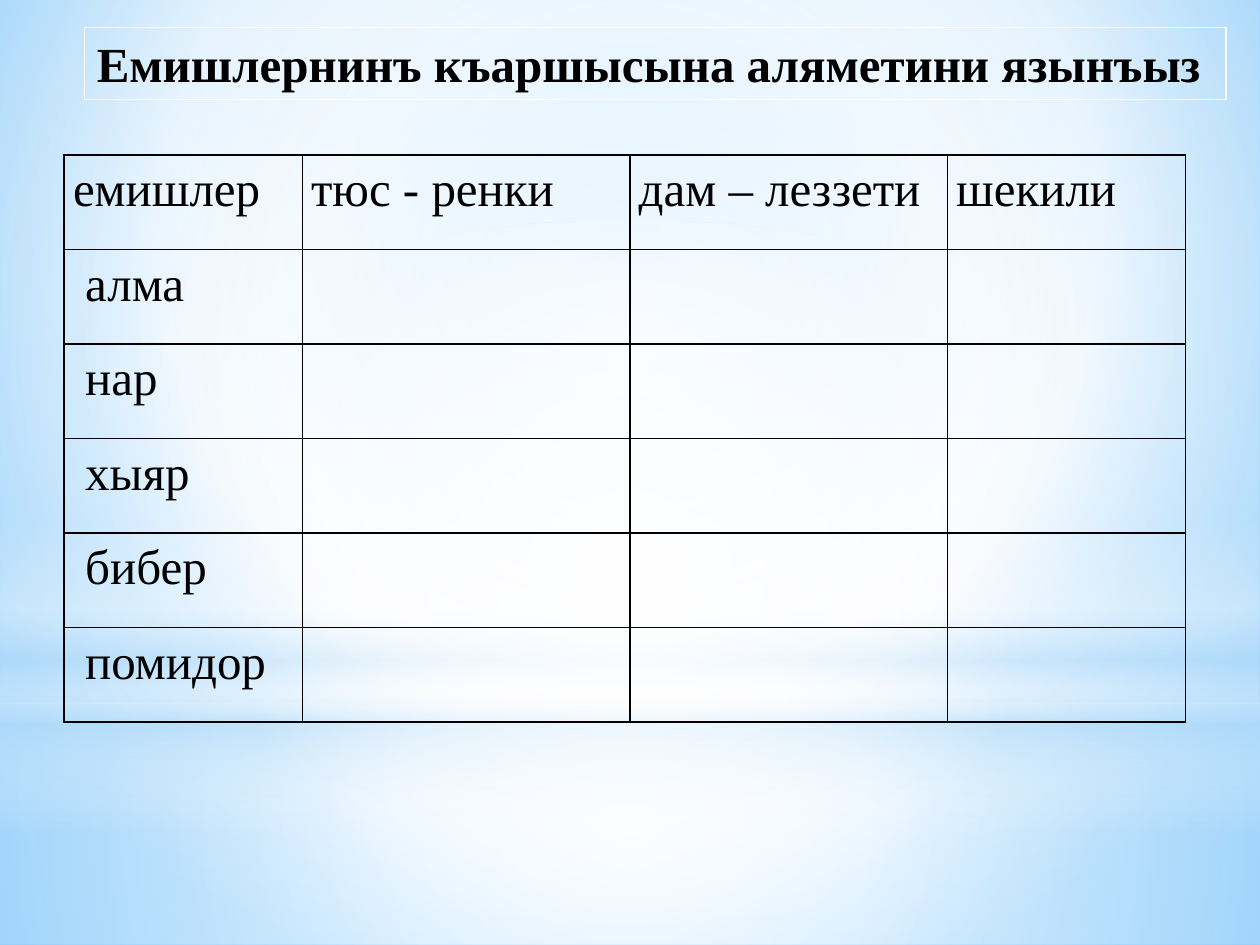
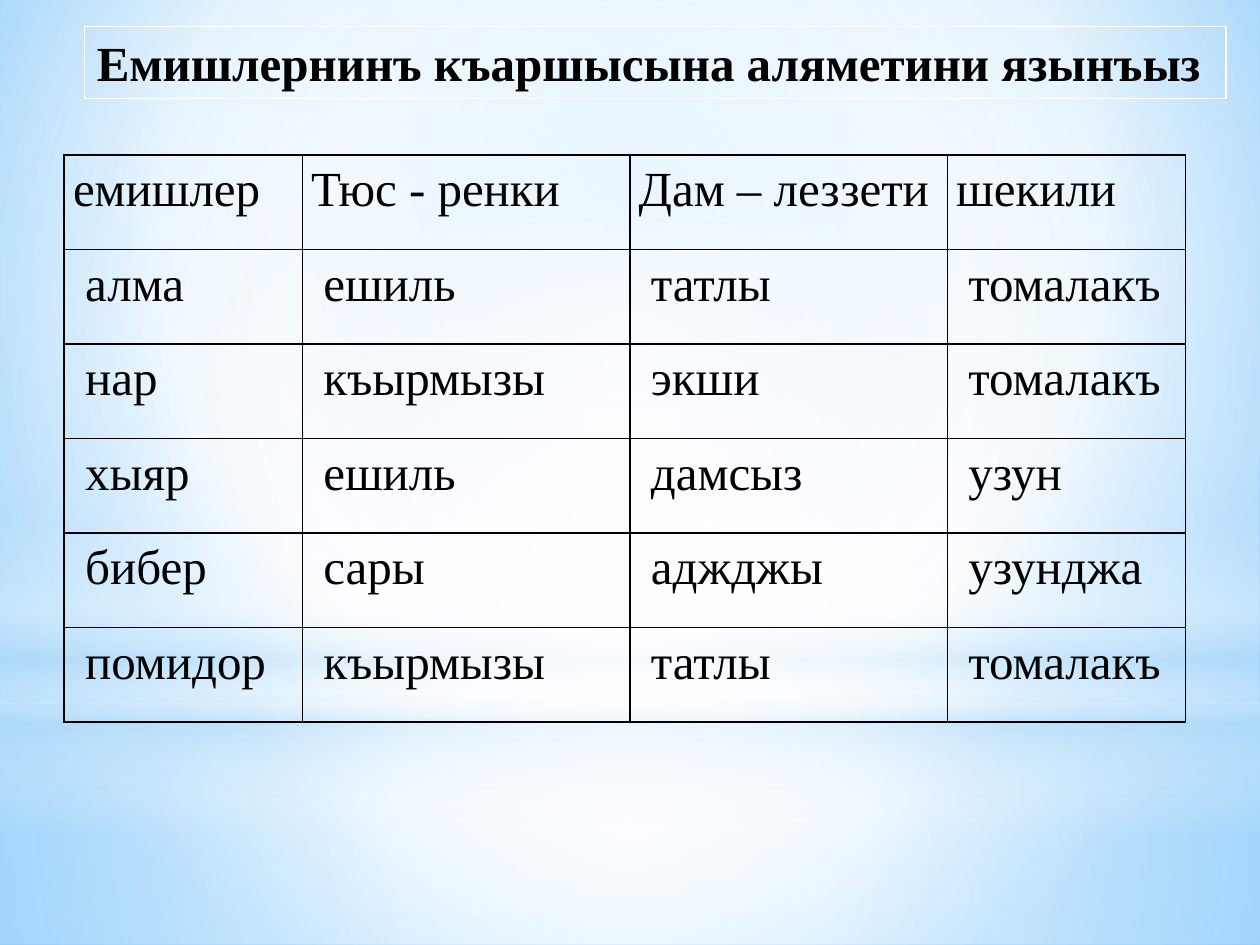
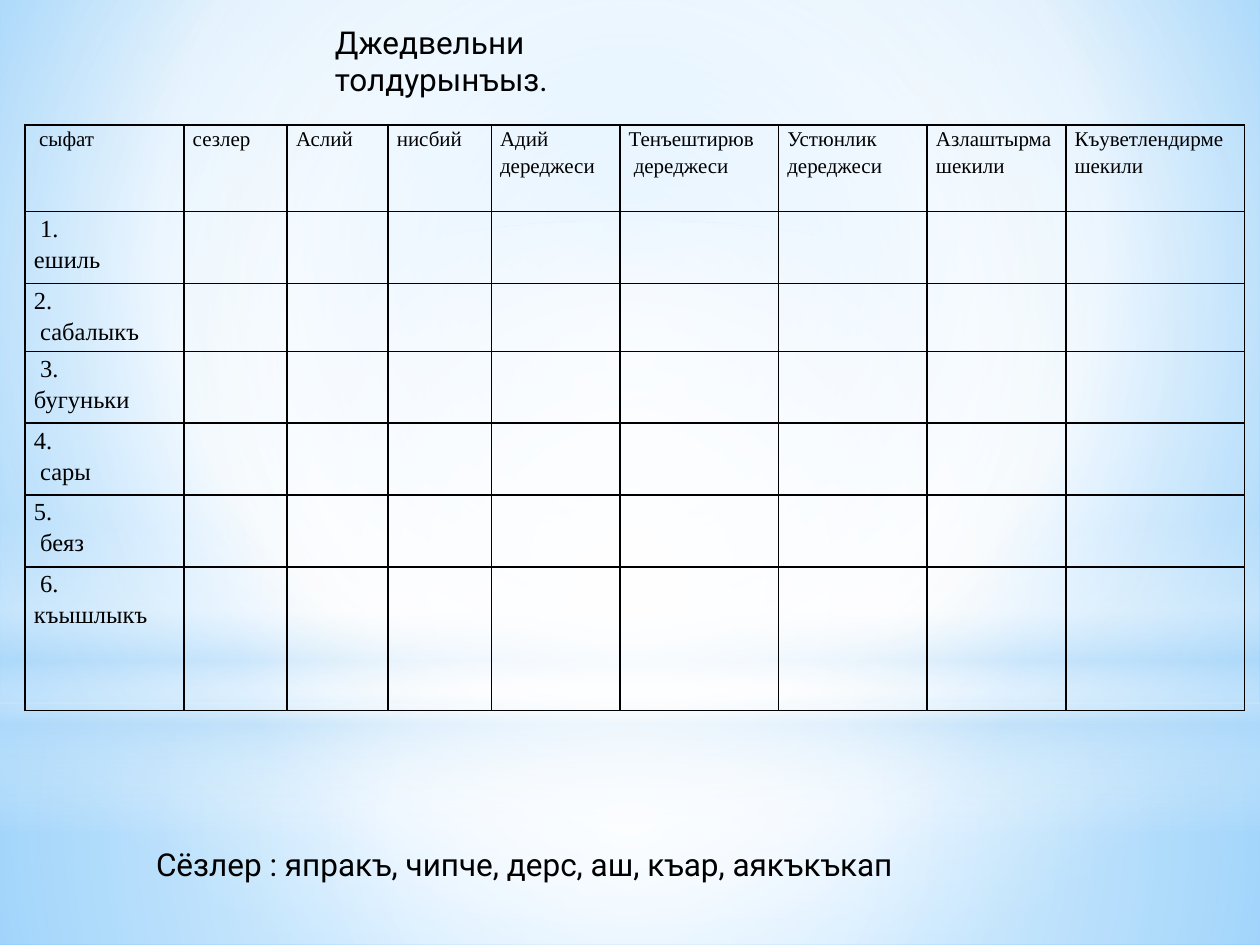
from dataclasses import dataclass

from lxml import etree
from pptx import Presentation
from pptx.dml.color import RGBColor
from pptx.enum.shapes import MSO_SHAPE
from pptx.enum.text import MSO_ANCHOR, PP_ALIGN
from pptx.oxml.ns import nsdecls, qn
from pptx.util import Inches, Pt

RECT, OVAL = MSO_SHAPE.RECTANGLE, MSO_SHAPE.OVAL
TOP, LEFT = MSO_ANCHOR.TOP, PP_ALIGN.LEFT


@dataclass(frozen=True)
class Theme:
    ink: str = "000000"
    white: str = "FFFFFF"
    haze: str = "B4DCFA"
    sky: str = "9ED5FF"
    deep: str = "5BB9FF"
    serif: str = "Times New Roman"
    sans: str = "Roboto"
    big: int = 28
    note: int = 18
    item: int = 14
    head: int = 12
    lead: float = 1.15
    pad: float = 0.07


T = Theme()
CENTER = (50, 50, 50, 50)

# Gradient stops: position %, colour, opacity %
SKY = [(0, T.sky, 100), (60, T.white, 100), (100, T.deep, 100)]
FLOOR = [(0, T.white, 91), (37, T.white, 76), (100, T.haze, 79)]
WALL = [(0, T.white, 89), (48, T.white, 62), (100, T.haze, 79)]
BAND = [(0, T.white, 0), (29, T.white, 30), (45, T.haze, 40),
        (55, T.white, 26), (65, T.haze, 60), (100, T.white, 0)]
GLOW = [(0, T.white, 100), (56, T.white, 0)]

# Layers from back to front: shape, top, height, stops, focus (None = downward)
LAYERS = [
    (RECT, 5.58, 1.92, FLOOR, CENTER),
    (RECT, 0, 5.58, WALL, CENTER),
    (RECT, 4.12, 2.5, BAND, None),
    (OVAL, 1.75, 5.58, GLOW, CENTER),
]

TASK = "Емишлернинъ къаршысына аляметини язынъыз"
FRUITS = [" алма", " нар", " хыяр", " бибер", " помидор"]
TRAITS = [
    [" ешиль", " татлы", " томалакъ"],
    [" къырмызы", " экши", " томалакъ"],
    [" ешиль", " дамсыз", " узун"],
    [" сары", " аджджы", " узунджа"],
    [" къырмызы", " татлы", " томалакъ"],
]
FORMS = [" сыфат", "сезлер", "Аслий", "нисбий", "Адий дереджеси",
         "Тенъештирюв\n дереджеси", "Устюнлик\nдереджеси",
         "Азлаштырма\nшекили", "Къуветлендирме\nшекили"]
WORDS = [" 1.\nешиль", "2.\n сабалыкъ", " 3.\nбугуньки",
         "4.\n сары", "5.\n беяз", " 6.\nкъышлыкъ"]


def grad(stops, focus):
    """Gradient fill that runs around a focus box, or downward without one."""
    marks = "".join(
        f'<a:gs pos="{pos * 1000}"><a:srgbClr val="{color}">'
        f'<a:alpha val="{alpha * 1000}"/></a:srgbClr></a:gs>'
        for pos, color, alpha in stops)
    if focus:
        sides = " ".join(f'{s}="{v * 1000}"' for s, v in zip("ltrb", focus))
        way = f'<a:path path="circle"><a:fillToRect {sides}/></a:path>'
    else:
        way = '<a:lin ang="5400000" scaled="0"/>'
    return etree.fromstring(
        f'<a:gradFill {nsdecls("a")} rotWithShape="1">'
        f'<a:gsLst>{marks}</a:gsLst>{way}</a:gradFill>')


def paint(fill, owner, stops, focus):
    fill.background()
    owner.replace(owner.find(qn("a:noFill")), grad(stops, focus))


def style(frame, font, size, bold=False, lead=None):
    for para in frame.paragraphs:
        para.alignment = LEFT
        if lead:
            para.line_spacing = lead
        for run in para.runs:
            run.font.name = font
            run.font.size = Pt(size)
            run.font.bold = bold
            run.font.color.rgb = RGBColor.from_string(T.ink)


def add_page(prs):
    """Blank slide with the shared sky and light layers."""
    slide = prs.slides.add_slide(prs.slide_layouts[6])
    fill = slide.background.fill
    paint(fill, slide.element.find(".//" + qn("p:bgPr")), SKY, (20, 10, 20, 60))
    for kind, top, high, stops, focus in LAYERS:
        layer = slide.shapes.add_shape(
            kind, 0, Inches(top), prs.slide_width, Inches(high))
        layer.shadow.inherit = False
        layer.line.fill.background()
        paint(layer.fill, layer.element.spPr, stops, focus)
    return slide


def add_title(slide, top):
    box = slide.shapes.add_shape(
        RECT, Inches(0.67), Inches(top), Inches(9.06), Inches(0.57))
    box.shadow.inherit = False
    box.fill.background()
    box.line.color.rgb = RGBColor.from_string(T.white)
    box.line.width = Pt(0.75)
    frame = box.text_frame
    frame.word_wrap = True
    frame.vertical_anchor = TOP
    frame.text = TASK
    style(frame, T.serif, T.big, bold=True)


def add_note(slide, left, top, wide, text):
    box = slide.shapes.add_textbox(
        Inches(left), Inches(top), Inches(wide), Inches(0.4))
    box.text_frame.word_wrap = True
    box.text_frame.text = text
    style(box.text_frame, T.sans, T.note)


def edge(cell):
    props = cell._tc.get_or_add_tcPr()
    for side in "LRTB":
        props.append(etree.fromstring(
            f'<a:ln{side} {nsdecls("a")} w="12700"><a:solidFill>'
            f'<a:srgbClr val="{T.ink}"/></a:solidFill></a:ln{side}>'))


def add_grid(slide, left, top, wides, highs, rows, head, body):
    """Ruled clear table; head and body are the type sizes."""
    table = slide.shapes.add_table(
        len(highs), len(wides), Inches(left), Inches(top),
        Inches(sum(wides)), Inches(sum(highs))).table
    table.first_row = table.horz_banding = False
    for col, wide in zip(table.columns, wides):
        col.width = Inches(wide)
    for row, high in zip(table.rows, highs):
        row.height = Inches(high)
    for cell in table.iter_cells():
        edge(cell)
        cell.fill.background()
        cell.margin_left = cell.margin_right = Inches(T.pad)
        cell.margin_top = cell.margin_bottom = 0
    for r, texts in enumerate(rows):
        for c, text in enumerate(texts):
            frame = table.cell(r, c).text_frame
            frame.text = text
            style(frame, T.serif, body if r else head, lead=T.lead)


def add_fruits(prs, top, heads, traits):
    slide = add_page(prs)
    add_title(slide, top)
    rows = [heads] + [[name, *vals] for name, vals in zip(FRUITS, traits)]
    add_grid(slide, 0.51, 1.23, [1.89, 2.6, 2.52, 1.89], [0.75] * 6,
             rows, T.big, T.big)


def add_forms(prs):
    slide = add_page(prs)
    add_grid(slide, 0.2, 0.99,
             [1.26, 0.82, 0.8, 0.82, 1.02, 1.26, 1.18, 1.1, 1.42],
             [0.69, 0.57, 0.54, 0.57, 0.57, 0.57, 1.14],
             [FORMS] + [[word] for word in WORDS], T.head, T.item)
    add_note(slide, 2.56, 0.13, 3.4, "Джедвельни толдурынъыз.")
    add_note(slide, 1.14, 6.66, 6.27,
             "Сёзлер : япракъ, чипче, дерс, аш, къар, аякъкъкап")


def main():
    prs = Presentation()
    prs.slide_width, prs.slide_height = Inches(10), Inches(7.5)
    add_fruits(prs, 0.22, ["емишлер", "тюс - ренки", "дам – леззети", "шекили"],
               [[]] * len(FRUITS))
    add_fruits(prs, 0.21, ["емишлер", "Тюс - ренки", "Дам – леззети", "шекили"],
               TRAITS)
    add_forms(prs)
    prs.save("out.pptx")


if __name__ == "__main__":
    main()
